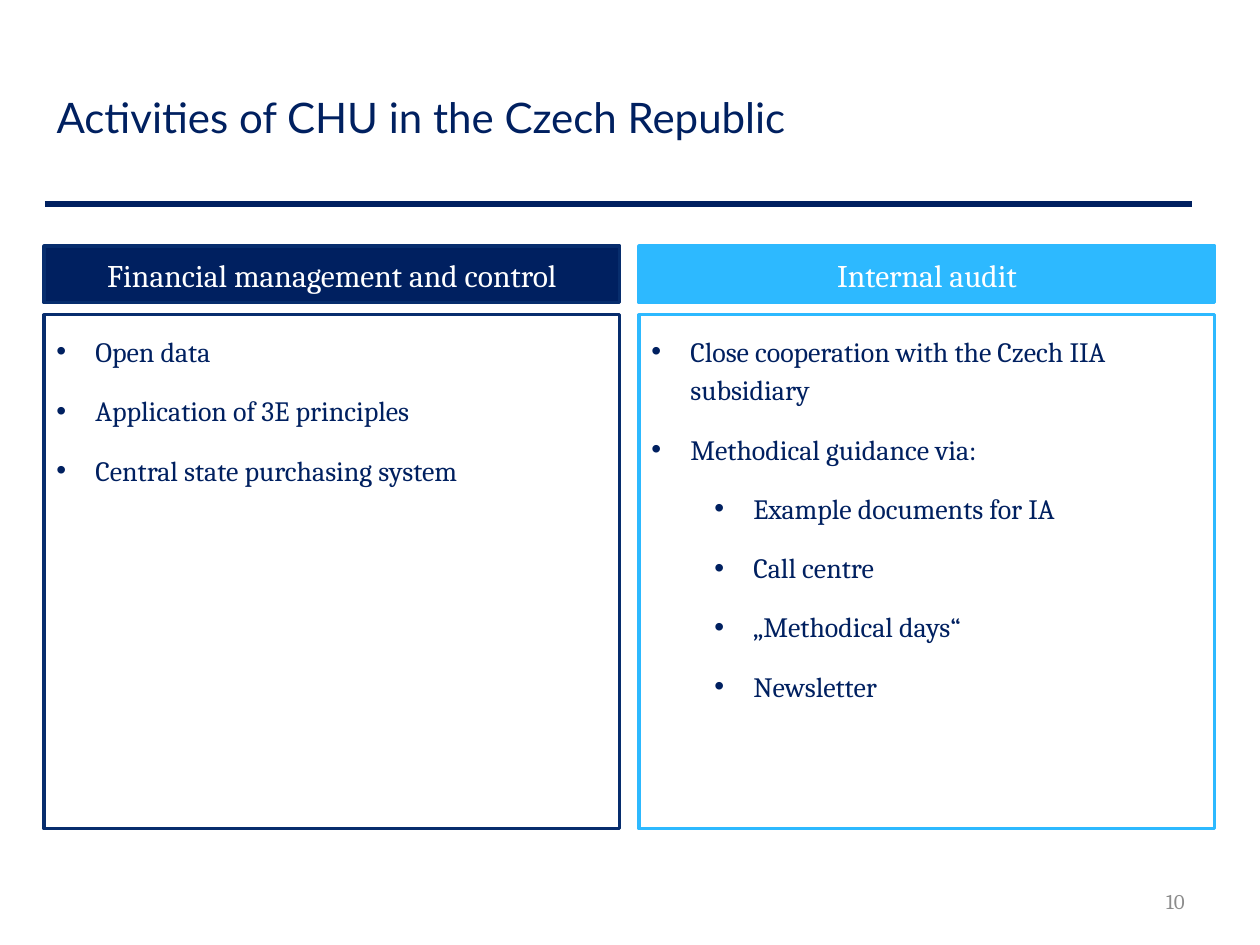
import pptx
import pptx.util
import pptx.dml.color
import pptx.enum.shapes
import pptx.enum.text
import pptx.oxml.ns
import lxml.etree

RGB = pptx.dml.color.RGBColor
NAVY = RGB(0x00, 0x20, 0x60)
NAVY_EDGE = RGB(0x07, 0x2D, 0x6D)
SKY = RGB(0x2D, 0xB9, 0xFF)
WHITE = RGB(0xFF, 0xFF, 0xFF)
GREY = RGB(0x8C, 0x8C, 0x8C)
ALIGN = pptx.enum.text.PP_ALIGN
ANCHOR = pptx.enum.text.MSO_ANCHOR

TITLE = "Activities of CHU in the Czech Republic"
PAGE_NUMBER = "10"
COLUMNS = [
    ("Financial management and control", NAVY, NAVY_EDGE, [
        (0, "Open data"),
        (0, "Application of 3E principles"),
        (0, "Central state purchasing system"),
    ]),
    ("Internal audit", SKY, SKY, [
        (0, "Close cooperation with the Czech IIA subsidiary"),
        (0, "Methodical guidance via:"),
        (1, "Example documents for IA"),
        (1, "Call centre"),
        (1, "„Methodical days“"),
        (1, "Newsletter"),
    ]),
]

LEFT, COLUMN_WIDTH, COLUMN_GAP = 44, 576, 19
HEADING_TOP, HEADING_HEIGHT = 246, 57
BODY_TOP, BODY_HEIGHT = 315, 514
BULLET_INDENT, LEVEL_STEP = 39, 63


def px(length):
    return round(length * 914400 / 126)


def write(frame, items, size, color, font="Cambria", align=ALIGN.LEFT,
          anchor=ANCHOR.MIDDLE, bullets=False):
    frame.word_wrap = True
    frame.vertical_anchor = anchor
    for index, (level, text) in enumerate(items):
        paragraph = frame.add_paragraph() if index else frame.paragraphs[0]
        paragraph.alignment = align
        paragraph.level = level
        run = paragraph.add_run()
        run.text = text
        run.font.name = font
        run.font.size = pptx.util.Pt(size)
        run.font.color.rgb = color
        if bullets:
            paragraph.line_spacing = 1.14
            paragraph.space_before = paragraph.space_after = pptx.util.Pt(6)
            properties = paragraph._p.get_or_add_pPr()
            properties.set("marL", str(px(BULLET_INDENT + level * LEVEL_STEP)))
            properties.set("indent", str(-px(BULLET_INDENT)))
            for tag, key, value in (("a:buFont", "typeface", "Arial"),
                                    ("a:buChar", "char", "•")):
                lxml.etree.SubElement(properties, pptx.oxml.ns.qn(tag)).set(key, value)


def add_box(slide, left, top, height, edge, fill=None):
    box = slide.shapes.add_shape(
        pptx.enum.shapes.MSO_SHAPE.RECTANGLE,
        px(left), px(top), px(COLUMN_WIDTH), px(height))
    box.shadow.inherit = False
    if fill is None:
        box.fill.background()
    else:
        box.fill.solid()
        box.fill.fore_color.rgb = fill
    box.line.color.rgb = edge
    box.line.width = pptx.util.Pt(1.75)
    return box


def main():
    deck = pptx.Presentation()
    deck.slide_width, deck.slide_height = px(1260), px(945)
    slide = deck.slides.add_slide(deck.slide_layouts[5])

    rule = slide.shapes.add_connector(
        pptx.enum.shapes.MSO_CONNECTOR.STRAIGHT, px(45), px(204), px(1192), px(204))
    rule.line.color.rgb = NAVY
    rule.line.width = pptx.util.Pt(3)
    lxml.etree.SubElement(rule._element.spPr, pptx.oxml.ns.qn("a:effectLst"))

    title = slide.shapes.title
    title.left, title.top = px(LEFT), px(38)
    title.width, title.height = px(1171), px(157)
    write(title.text_frame, [(0, TITLE)], 24, NAVY, font="Lato")

    page = slide.shapes.add_textbox(px(903), px(876), px(294), px(50))
    write(page.text_frame, [(0, PAGE_NUMBER)], 12, GREY, align=ALIGN.RIGHT)

    for index, (heading, fill, edge, points) in enumerate(COLUMNS):
        left = LEFT + index * (COLUMN_WIDTH + COLUMN_GAP)
        header = add_box(slide, left, HEADING_TOP, HEADING_HEIGHT, edge, fill)
        write(header.text_frame, [(0, heading)], 18, WHITE, align=ALIGN.CENTER)
        body = add_box(slide, left, BODY_TOP, BODY_HEIGHT, edge)
        body.text_frame.margin_top = body.text_frame.margin_bottom = px(15)
        write(body.text_frame, points, 16, NAVY, anchor=ANCHOR.TOP, bullets=True)

    deck.save("out.pptx")


if __name__ == "__main__":
    main()
